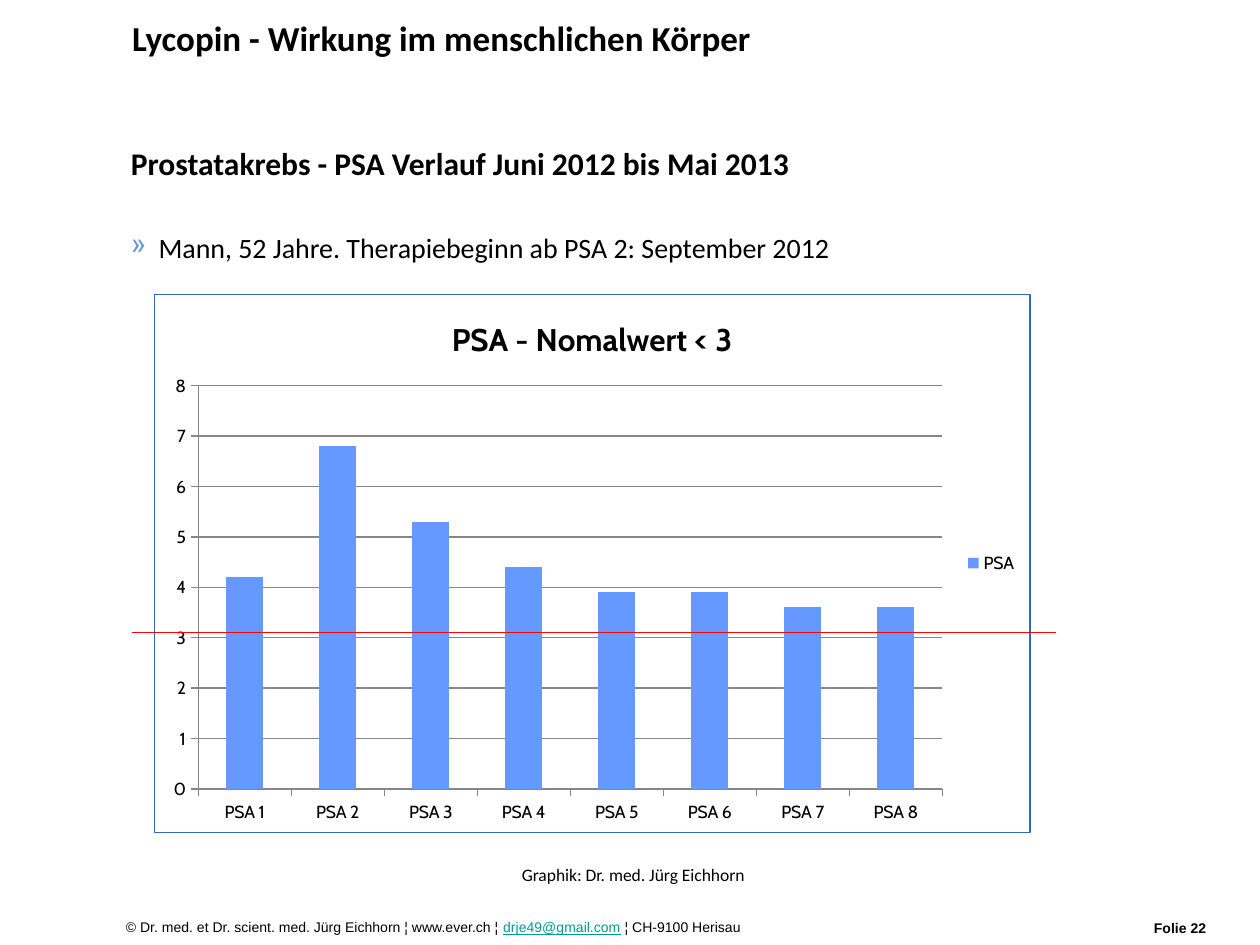
from lxml import etree
from pptx import Presentation
from pptx.chart.data import CategoryChartData
from pptx.dml.color import RGBColor
from pptx.enum.chart import XL_CHART_TYPE, XL_LEGEND_POSITION, XL_TICK_MARK
from pptx.enum.shapes import MSO_CONNECTOR
from pptx.enum.text import MSO_ANCHOR, PP_ALIGN
from pptx.oxml import parse_xml
from pptx.oxml.ns import nsdecls, qn
from pptx.util import Inches, Pt

COLUMNS = XL_CHART_TYPE.COLUMN_CLUSTERED
LEGEND_RIGHT = XL_LEGEND_POSITION.RIGHT
TICK_OUT = XL_TICK_MARK.OUTSIDE
STRAIGHT = MSO_CONNECTOR.STRAIGHT
TOP, MIDDLE = MSO_ANCHOR.TOP, MSO_ANCHOR.MIDDLE
LEFT, CENTER = PP_ALIGN.LEFT, PP_ALIGN.CENTER

BLACK = RGBColor(0x00, 0x00, 0x00)
TEAL = RGBColor(0x00, 0x99, 0x99)
BAR_BLUE = RGBColor(0x66, 0x99, 0xFF)
GREY = RGBColor(0x86, 0x86, 0x86)
RED = RGBColor(0xFF, 0x00, 0x00)

prs = Presentation()
prs.slide_width, prs.slide_height = Inches(10), Inches(7.5)
slide = prs.slides.add_slide(prs.slide_layouts[6])


def add_run(paragraph, text, size=8, font="Calibri", color=BLACK, bold=False,
            underline=False):
    run = paragraph.add_run()
    run.text = text
    run.font.size, run.font.name = Pt(size), font
    run.font.bold, run.font.underline = bold, underline
    run.font.color.rgb = color


def add_text(left, top, width, height, text, anchor=TOP, align=LEFT, **style):
    frame = slide.shapes.add_textbox(
        Inches(left), Inches(top), Inches(width), Inches(height)).text_frame
    frame.word_wrap = True
    frame.vertical_anchor = anchor
    frame.paragraphs[0].alignment = align
    add_run(frame.paragraphs[0], text, **style)
    return frame


# Footer
add_text(9.06, 7.25, 0.94, 0.23, "Folie 22", font="Arial", bold=True)
footer = add_text(0.9, 7.24, 8.11, 0.23,
                  "© Dr. med. et Dr. scient. med. Jürg Eichhorn ¦ www.ever.ch ¦ ",
                  font="Arial").paragraphs[0]
add_run(footer, "drje49@gmail.com", font="Arial", color=TEAL, underline=True)
add_run(footer, " ¦ CH-9100 Herisau", font="Arial")

# Title, heading and bullet
add_text(0.95, 0.05, 6.42, 0.5, "Lycopin - Wirkung im menschlichen Körper",
         anchor=MIDDLE, size=20, bold=True)
body = add_text(0.94, 1.09, 8.79, 1.2,
                "Prostatakrebs - PSA Verlauf Juni 2012 bis Mai 2013",
                size=18, bold=True)
bullet = body.add_paragraph()
bullet_format = bullet._p.get_or_add_pPr()
bullet_format.set("marL", str(Inches(0.22)))
bullet_format.set("indent", str(Inches(-0.22)))
bullet_color = etree.SubElement(bullet_format, qn("a:buClr"))
etree.SubElement(bullet_color, qn("a:srgbClr"), val="6699CC")
etree.SubElement(bullet_format, qn("a:buChar"), char="»")
bullet.space_before = Pt(28)
add_run(bullet, "Mann, 52 Jahre. Therapiebeginn ab PSA 2: September 2012", size=16)

# PSA chart
psa_data = CategoryChartData()
psa_data.categories = [f"PSA {number}" for number in range(1, 9)]
psa_data.add_series("PSA", (4.2, 6.8, 5.3, 4.4, 3.9, 3.9, 3.6, 3.6))
chart = slide.shapes.add_chart(COLUMNS, Inches(1.22), Inches(2.33),
                               Inches(6.96), Inches(4.28), psa_data).chart
chart.font.size, chart.font.name = Pt(10), "Cabin"
chart.font.color.rgb = BLACK
chart.has_title = True
add_run(chart.chart_title.text_frame.paragraphs[0], "PSA - Nomalwert < 3",
        size=18, font="Cabin", bold=True)
chart.has_legend = True
chart.legend.position = LEGEND_RIGHT
chart.legend.include_in_layout = False

bars = chart.plots[0]
bars.gap_width = 150
bars.vary_by_categories = False
bars.series[0].format.fill.solid()
bars.series[0].format.fill.fore_color.rgb = BAR_BLUE

for axis in (chart.category_axis, chart.value_axis):
    axis.major_tick_mark = TICK_OUT
    axis.format.line.color.rgb = GREY
scale = chart.value_axis
scale.minimum_scale, scale.maximum_scale, scale.major_unit = 0, 8, 1
scale.has_major_gridlines = True
scale.major_gridlines.format.line.color.rgb = GREY

# Chart border and position of the plot area
chart_xml = chart._chartSpace.find(qn("c:chart"))
chart_xml.addnext(parse_xml(
    f'<c:spPr {nsdecls("c", "a")}><a:noFill/><a:ln w="{Pt(0.75)}"><a:solidFill>'
    '<a:srgbClr val="3366CC"/></a:solidFill></a:ln></c:spPr>'))
plot_area = chart_xml.find(qn("c:plotArea"))
for old_layout in plot_area.findall(qn("c:layout")):
    plot_area.remove(old_layout)
layout = etree.Element(qn("c:layout"))
plot_area.insert(0, layout)
manual = etree.SubElement(layout, qn("c:manualLayout"))
for tag, value in (("layoutTarget", "inner"), ("xMode", "edge"), ("yMode", "edge"),
                   ("x", "0.05"), ("y", "0.17"), ("w", "0.85"), ("h", "0.75")):
    etree.SubElement(manual, qn(f"c:{tag}"), val=value)

# Limit line for the normal value
limit = slide.shapes.add_connector(STRAIGHT, Inches(1.05), Inches(5.02),
                                   Inches(8.38), Inches(5.02))
limit.line.color.rgb = RED
limit.line.width = Pt(1)
etree.SubElement(limit._element.spPr, qn("a:effectLst"))

# Credit below the chart
add_text(2.17, 6.81, 5.71, 0.27, "Graphik: Dr. med. Jürg Eichhorn",
         align=CENTER, size=10)

prs.save("out.pptx")
